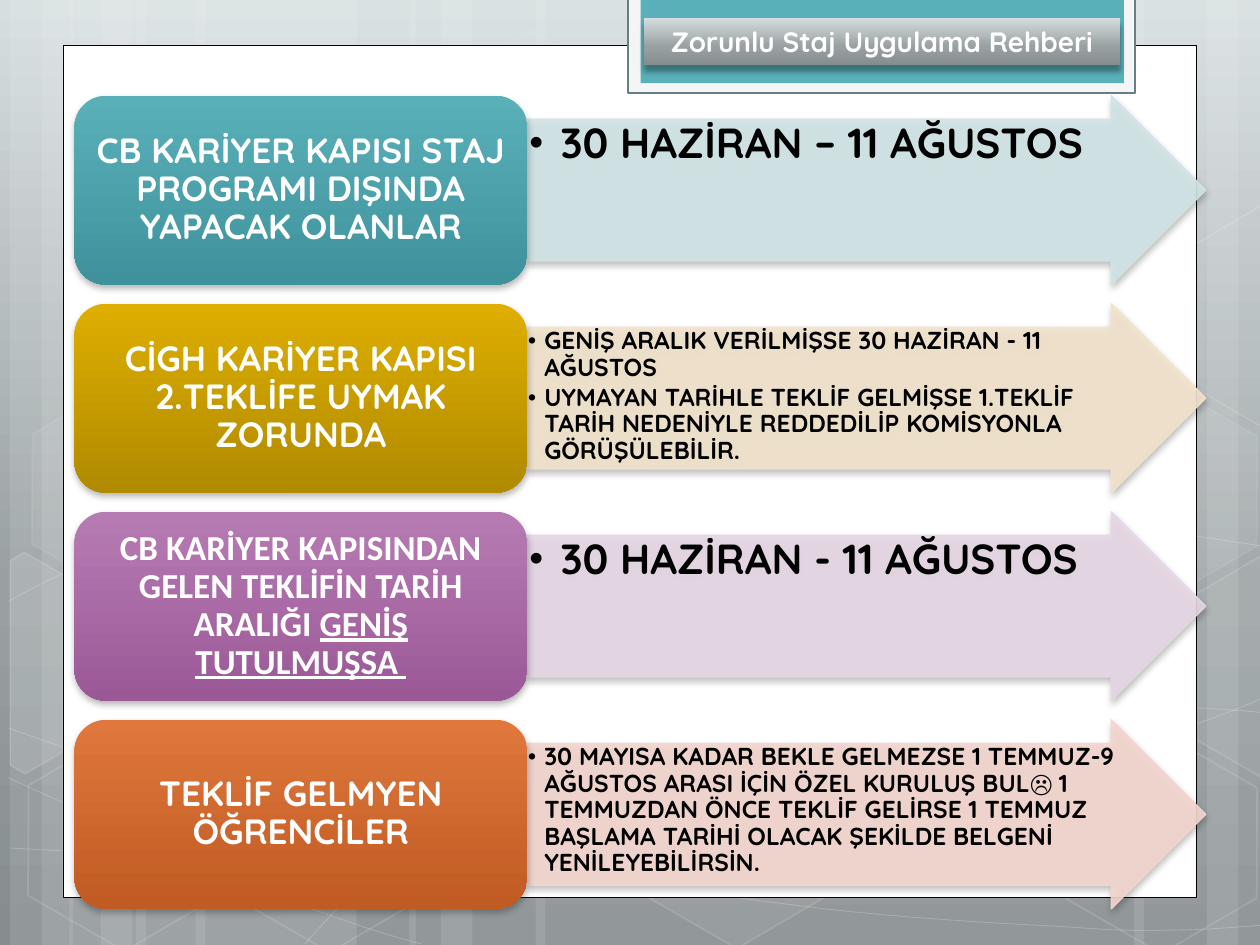
from dataclasses import dataclass
from math import cos, radians, sin

from lxml import etree
from pptx import Presentation
from pptx.dml.color import RGBColor
from pptx.enum.shapes import MSO_SHAPE
from pptx.enum.text import MSO_ANCHOR, PP_ALIGN
from pptx.oxml.ns import qn
from pptx.util import Inches, Pt

RECT, ROUND = MSO_SHAPE.RECTANGLE, MSO_SHAPE.ROUNDED_RECTANGLE
ARROW, HEXAGON = MSO_SHAPE.RIGHT_ARROW, MSO_SHAPE.HEXAGON
CENTER, LEFT = PP_ALIGN.CENTER, PP_ALIGN.LEFT
TOP, MIDDLE = MSO_ANCHOR.TOP, MSO_ANCHOR.MIDDLE

W, H = Inches(10), Inches(7.5)
COL, ROW = W / 100, H / 75
TILT = 30
C = {
    "white": "FFFFFF", "black": "000000", "tab": "F5F5F5", "edge": "648086",
    "silver": "D6DEDF", "gray": "99A0A2", "slate": "868D8F",
    "teal": "59B0B9", "teal_dark": "3F929B", "teal_pale": "D1E4E6",
    "gold": "DEAE00", "gold_dark": "B08A00", "gold_pale": "F2E3CC",
    "plum": "B77BB4", "plum_dark": "9A5996", "plum_pale": "E6D7E5",
    "rust": "E0773C", "rust_dark": "BF5B23", "rust_pale": "F3D6CE",
}
METAL = ((0, "silver"), (62, "gray"), (100, "slate"))


@dataclass
class Step:
    color: str
    label: str
    notes: tuple[str, ...]
    size: int
    font: str = "Quicksand"
    underlined: str = ""


@dataclass
class Hexa:
    x: float
    y: float
    line_alpha: int = 12
    fill_alpha: int = 0


@dataclass
class CutHexa:
    center: tuple[float, float]
    points: list[tuple[float, float]]
    fill_alpha: int = 0


STEPS = [
    Step("teal", "CB KARİYER KAPISI STAJ PROGRAMI DIŞINDA YAPACAK OLANLAR",
         ("30 HAZİRAN – 11 AĞUSTOS",), 24),
    Step("gold", "CİGH KARİYER KAPISI 2.TEKLİFE UYMAK ZORUNDA",
         ("GENİŞ ARALIK VERİLMİŞSE 30 HAZİRAN - 11 AĞUSTOS",
          "UYMAYAN TARİHLE TEKLİF GELMİŞSE 1.TEKLİF TARİH NEDENİYLE "
          "REDDEDİLİP KOMİSYONLA GÖRÜŞÜLEBİLİR."), 14),
    Step("plum", "CB KARİYER KAPISINDAN GELEN TEKLİFİN TARİH ARALIĞI ",
         ("30 HAZİRAN - 11 AĞUSTOS",), 24, "Calibri", "GENİŞ TUTULMUŞSA "),
    Step("rust", "TEKLİF GELMYEN ÖĞRENCİLER",
         ("30 MAYISA KADAR BEKLE GELMEZSE 1 TEMMUZ-9 AĞUSTOS ARASI İÇİN ÖZEL "
          "KURULUŞ BUL☹ 1 TEMMUZDAN ÖNCE TEKLİF GELİRSE 1 TEMMUZ BAŞLAMA "
          "TARİHİ OLACAK ŞEKİLDE BELGENİ YENİLEYEBİLİRSİN.",), 14),
]
STRIPES = [(10.8, 17.5), (0.8, 5), (3.3, 8.3), (15.5, 17.5), (5.5, 5), (8, 8.3),
           (73.3, 17.5), (95.8, 5), (90, 8.3), (42.5, 30.8), (32.5, 5), (35, 8.3)]
CURVES = [
    [(.7, 67.3), (6.1, 67.6), (11.5, 67.9), (19, 67.8), (26.5, 67.7), (35.8, 67.5), (45.8, 66.5),
     (55.8, 65.5), (70, 63.6), (79.2, 61.7), (88.3, 59.8), (97.7, 56.8), (100.7, 55.1)],
    [(.7, 47.7), (3.6, 46.1), (6.5, 44.6), (12.1, 43.1), (17.8, 41.6), (25.9, 39.4), (34.7, 38.7),
     (43.6, 38), (54.4, 37.9), (65.4, 38.7), (76.4, 39.5), (94.7, 42.6), (100.7, 43.4)],
    [(.6, 61.7), (12.7, 67.2), (24.7, 72.7), (33.4, 74.9)],
    [(.7, 57.8), (3.8, 58.9), (7, 60), (12.8, 61.6), (18.6, 63.1), (27.3, 65.6), (35.7, 67.3),
     (44, 69), (54.5, 70.8), (62.8, 71.8), (71.1, 72.9), (80, 73.3), (85.3, 73.6),
     (90.5, 74), (91.9, 73.8), (94.5, 73.8), (97.1, 73.7), (98.9, 73.5), (100.7, 73.4)],
    [(24.2, 74.9), (26, 72.9), (27.8, 70.9), (30.2, 69.1), (32.6, 67.3), (36, 65.3), (38.8, 63.9),
     (41.6, 62.5), (43.3, 61.9), (47, 60.9), (50.6, 59.9), (57.3, 58.5), (60.8, 57.8),
     (64.4, 57.1), (64.9, 57.1), (68, 56.9), (71.1, 56.6), (76, 56.3), (79.4, 56.2),
     (82.9, 56.1), (88.6, 56.2), (88.6, 56.2), (90.8, 56.2), (93.1, 56.2), (95.3, 56.2),
     (97.1, 56.3), (98.8, 56.4), (100.6, 56.6)],
]
HEXAS = [Hexa(33.4, 3.6, 8, 4), Hexa(49.7, 58.9, 12, 6), Hexa(1.1, 59.1), Hexa(1.4, 31.2, 8, 7),
         Hexa(17.4, 59.2), Hexa(75.3, 45.3, 12, 10), Hexa(83.4, 59.3), Hexa(83.4, 31.4, 8, 7)]
CUT_HEXAS = [
    CutHexa((3.6, 53.5),
            [(.8, 44.5), (1.9, 43.8), (9.6, 48.2), (9.5, 57), (2, 61.4), (.8, 60.7)], 10),
    CutHexa((98.5, 52),
            [(92.6, 48.5), (100.1, 44.1), (100.9, 44.6), (100.9, 61.3), (100.2, 61.7), (92.6, 57.3)], 4),
    CutHexa((98.5, 24.1),
            [(92.6, 20.7), (100.1, 16.3), (101, 16.8), (100.9, 33.5), (100.2, 33.9), (92.6, 29.5)]),
]


def sub(parent, tag: str, **attrs):
    return etree.SubElement(parent, qn(tag), {k: str(v) for k, v in attrs.items()})


def set_gradient(fill, el, stops) -> None:
    fill.gradient()
    fill.gradient_angle = 270
    gs_lst = el.xpath(".//a:gsLst")[0]
    for gs in list(gs_lst):
        gs_lst.remove(gs)
    for pos, color in stops:
        sub(sub(gs_lst, "a:gs", pos=pos * 1000), "a:srgbClr", val=C[color])


def set_solid(fill, el, xpath: str, color: str, alpha: int) -> None:
    fill.solid()
    fill.fore_color.rgb = RGBColor.from_string(C[color])
    if alpha < 100:
        sub(el.xpath(xpath)[0], "a:alpha", val=alpha * 1000)


def style(sp, fill=None, alpha=100, line=None, width=1.0, line_alpha=100, shadow=None):
    sp.shadow.inherit = False
    spPr = sp.element.spPr
    if isinstance(fill, tuple):
        set_gradient(sp.fill, spPr, fill)
    elif fill and alpha:
        set_solid(sp.fill, spPr, "./a:solidFill/a:srgbClr", fill, alpha)
    else:
        sp.fill.background()
    if line:
        set_solid(sp.line.fill, spPr, "./a:ln/a:solidFill/a:srgbClr", line, line_alpha)
        sp.line.width = Pt(width)
    else:
        sp.line.fill.background()
    if shadow:
        opacity, blur, dist = shadow
        shdw = sub(spPr.find(qn("a:effectLst")), "a:outerShdw", blurRad=Pt(blur),
                   dist=Pt(dist), dir=5400000, rotWithShape=0)
        sub(sub(shdw, "a:srgbClr", val=C["black"]), "a:alpha", val=opacity * 1000)
    return sp


def add_box(s, kind, x: float, y: float, w: float, h: float, **fmt):
    box = (round(x * COL), round(y * ROW), round(w * COL), round(h * ROW))
    return style(s.shapes.add_shape(kind, *box), **fmt)


def add_outline(s, points, close: bool, **fmt):
    pts = [(round(x * COL), round(y * ROW)) for x, y in points]
    builder = s.shapes.build_freeform(*pts[0])
    builder.add_line_segments(pts[1:], close=close)
    return style(builder.convert_to_shape(), **fmt)


def add_curve(s, knots, **fmt) -> None:
    sp = add_outline(s, knots, False, **fmt)
    segments = sp.element.xpath(".//a:lnTo")
    outline = segments[0].getparent()
    for i in range(0, len(segments), 3):
        bend = sub(outline, "a:cubicBezTo")
        for segment in segments[i:i + 3]:
            bend.append(segment[0])
            outline.remove(segment)


def add_cut_hexa(s, cut: CutHexa) -> None:
    cx, cy = cut.center
    c, d = cos(radians(TILT)), sin(radians(TILT))
    points = [(cx + (x - cx) * c + (y - cy) * d, cy - (x - cx) * d + (y - cy) * c)
              for x, y in cut.points]
    sp = add_outline(s, points, True, fill="white", alpha=cut.fill_alpha,
                     line="white", line_alpha=12)
    sp.rotation = TILT


def write(sp, *paras: str, size=20, font="Quicksand", color="white", align=CENTER, anchor=MIDDLE,
          insets=(0.08, 0.04), spacing=0.9, after=0.0, bullet=0.0, underlined="") -> None:
    tf = sp.text_frame
    tf.word_wrap = True
    tf.vertical_anchor = anchor
    tf.margin_left = tf.margin_right = Inches(insets[0])
    tf.margin_top = tf.margin_bottom = Inches(insets[1])
    for i, text in enumerate(paras):
        p = tf.add_paragraph() if i else tf.paragraphs[0]
        p.alignment, p.line_spacing, p.space_after = align, spacing, Pt(after)
        if bullet:
            pPr = p._p.get_or_add_pPr()
            pPr.set("marL", str(Inches(bullet)))
            pPr.set("indent", str(-Inches(bullet)))
            sub(pPr, "a:buFont", typeface=font)
            sub(pPr, "a:buChar", char="•")
        for part in filter(None, (text, underlined)):
            r = p.add_run()
            r.text = part
            r.font.size, r.font.name, r.font.bold = Pt(size), font, True
            r.font.color.rgb = RGBColor.from_string(C[color])
            if part == underlined:
                r.font.underline = True


def add_backdrop(s) -> None:
    set_gradient(s.background.fill, s.element, METAL)
    for x, w in STRIPES:
        add_box(s, RECT, x, 0, w, 75, fill="white", alpha=10)
    for knots in CURVES:
        add_curve(s, knots, line="white", width=0.5, line_alpha=20)
    for hx in HEXAS:
        sp = add_box(s, HEXAGON, hx.x, hx.y, 17.5, 15.2, fill="white", alpha=hx.fill_alpha,
                     line="white", line_alpha=hx.line_alpha)
        sp.adjustments[0] = 0.285
        sp.rotation = TILT
    for cut in CUT_HEXAS:
        add_cut_hexa(s, cut)


def add_header(s) -> None:
    add_box(s, RECT, 5, 3.6, 90, 67.65, fill="white", line="black", width=0.5)
    add_box(s, RECT, 49.85, -0.2, 40.25, 7.6, fill="tab", line="edge", width=1.25)
    add_box(s, RECT, 50.85, -0.2, 38.35, 6.8, fill="teal")
    sp = add_box(s, RECT, 51.1, 1.4, 37.8, 3.75, fill=METAL, shadow=(34, 3.5, 4))
    write(sp, "Zorunlu Staj Uygulama Rehberi", size=16, insets=(0.1, 0.05), spacing=1.0)


def add_step(s, step: Step, y: float) -> None:
    pale, shadow = f"{step.color}_pale", (28, 4, 2)
    sp = add_box(s, ARROW, 41.8, y, 53.9, 15, fill=pale, alpha=90, line=pale, width=0.75,
                 line_alpha=90, shadow=shadow)
    sp.adjustments[0], sp.adjustments[1] = 0.75, 0.5
    big = step.size > 20
    inset = 0.02 if big else 0.01
    write(sp, *step.notes, size=step.size, color="black", align=LEFT, anchor=TOP,
          insets=(inset, inset), after=step.size * 0.15, bullet=0.25 if big else 0.13)
    sp = add_box(s, ROUND, 5.9, y, 35.95, 15, shadow=shadow,
                 fill=((0, step.color), (100, f"{step.color}_dark")))
    write(sp, step.label, font=step.font, underlined=step.underlined)


def main() -> None:
    prs = Presentation()
    prs.slide_width, prs.slide_height = W, H
    s = prs.slides.add_slide(prs.slide_layouts[6])
    add_backdrop(s)
    add_header(s)
    for i, step in enumerate(STEPS):
        add_step(s, step, 7.6 + 16.51 * i)
    prs.save("out.pptx")


if __name__ == "__main__":
    main()
